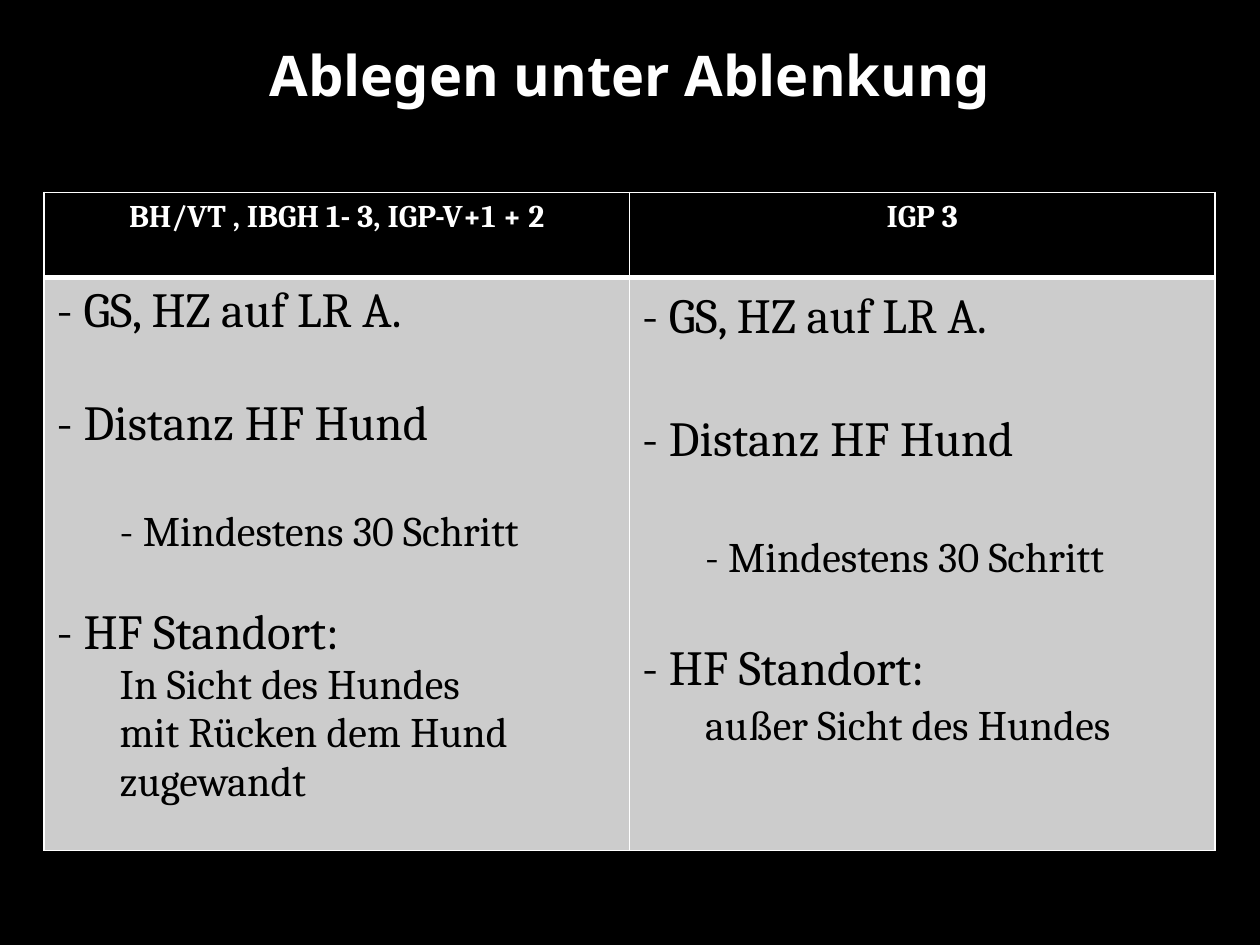
import pptx
import pptx.dml.color
import pptx.enum.text
import pptx.oxml
import pptx.oxml.ns
import pptx.util
from pptx.util import Cm, Pt

BLACK, WHITE, GREY = "000000", "FFFFFF", "CCCCCC"
ALIGN = pptx.enum.text.PP_ALIGN
INDENT = Cm(1.27)

HEADERS = ["BH/VT , IBGH 1- 3, IGP-V+1 + 2", "IGP 3"]
# Each line: text, level, gap before in lines of the size given (0 for none)
COMMON = [
    ("- GS, HZ auf LR A.", 0, 0),
    ("- Distanz HF Hund", 0, 28),
    ("- Mindestens 30 Schritt", 1, 28),
    ("- HF Standort:", 0, 24),
]
COLUMNS = [
    (1.0, COMMON + [("In Sicht des Hundes", 1, 0),
                    ("mit Rücken dem Hund zugewandt", 1, 0)]),
    (1.1, COMMON + [("außer Sicht des Hundes", 1, 0)]),
]
LINE_HEIGHT = 1.15  # natural line height of the body font
LEVEL_SIZES = [28, 24]


def color(value):
    return pptx.dml.color.RGBColor.from_string(value)


class SlideBuilder:
    heading_font = "Noto Sans"
    body_font = "Cambria"

    def __init__(self, presentation):
        self.slide = presentation.slides.add_slide(presentation.slide_layouts[5])
        self.slide.background.fill.solid()
        self.slide.background.fill.fore_color.rgb = color(BLACK)

    def format_runs(self, paragraph, font, size, text_color, bold):
        for run in paragraph.runs:
            run.font.name = font
            run.font.size = Pt(size)
            run.font.bold = bold
            run.font.color.rgb = color(text_color)

    def title(self, text, left, top, width, height):
        shape = self.slide.shapes.title
        shape.left, shape.top, shape.width, shape.height = left, top, width, height
        frame = shape.text_frame
        frame.text = text
        frame.vertical_anchor = pptx.enum.text.MSO_ANCHOR.TOP
        frame.margin_top = Cm(0.05)
        frame.paragraphs[0].alignment = ALIGN.CENTER
        self.format_runs(frame.paragraphs[0], self.heading_font, 32, WHITE, True)

    def table(self, left, top, width, row_heights, columns):
        shape = self.slide.shapes.add_table(
            len(row_heights), columns, left, top, width, sum(row_heights))
        for row, height in zip(shape.table.rows, row_heights):
            row.height = height
        return shape.table

    def cell_style(self, cell, fill, top=1, bottom=1):
        properties = cell._tc.get_or_add_tcPr()
        for side, points in (("L", 1), ("R", 1), ("T", top), ("B", bottom)):
            properties.append(pptx.oxml.parse_xml(
                f'<a:ln{side} {pptx.oxml.ns.nsdecls("a")} w="{Pt(points)}">'
                f'<a:solidFill><a:srgbClr val="{WHITE}"/></a:solidFill>'
                f'</a:ln{side}>'))
        cell.fill.solid()
        cell.fill.fore_color.rgb = color(fill)

    def header_cell(self, cell, text):
        self.cell_style(cell, BLACK, bottom=3)
        cell.text_frame.text = text
        paragraph = cell.text_frame.paragraphs[0]
        paragraph.alignment = ALIGN.CENTER
        self.format_runs(paragraph, self.body_font, 18, WHITE, True)

    def body_cell(self, cell, lines, spacing):
        self.cell_style(cell, GREY, top=3)
        frame = cell.text_frame
        frame.text = "\n".join(text for text, _, _ in lines)
        for paragraph, (_, level, gap) in zip(frame.paragraphs, lines):
            paragraph.level = level
            paragraph._p.get_or_add_pPr().set("marL", str(level * INDENT))
            paragraph.line_spacing = spacing
            if gap:
                paragraph.space_before = Pt(round(gap * LINE_HEIGHT * spacing))
            self.format_runs(paragraph, self.body_font, LEVEL_SIZES[level], BLACK, False)


def main():
    presentation = pptx.Presentation()
    presentation.slide_width, presentation.slide_height = Cm(25.4), Cm(19.05)
    builder = SlideBuilder(presentation)

    # Title
    builder.title("Ablegen unter Ablenkung", Cm(1.27), Cm(0.76), Cm(22.86), Cm(3.18))

    # Comparison table
    table = builder.table(Cm(0.89), Cm(3.88), Cm(23.6), [Cm(1.71), Cm(11.55)], len(HEADERS))
    for index, (header, (spacing, lines)) in enumerate(zip(HEADERS, COLUMNS)):
        builder.header_cell(table.cell(0, index), header)
        builder.body_cell(table.cell(1, index), lines, spacing)

    presentation.save("out.pptx")


if __name__ == "__main__":
    main()
